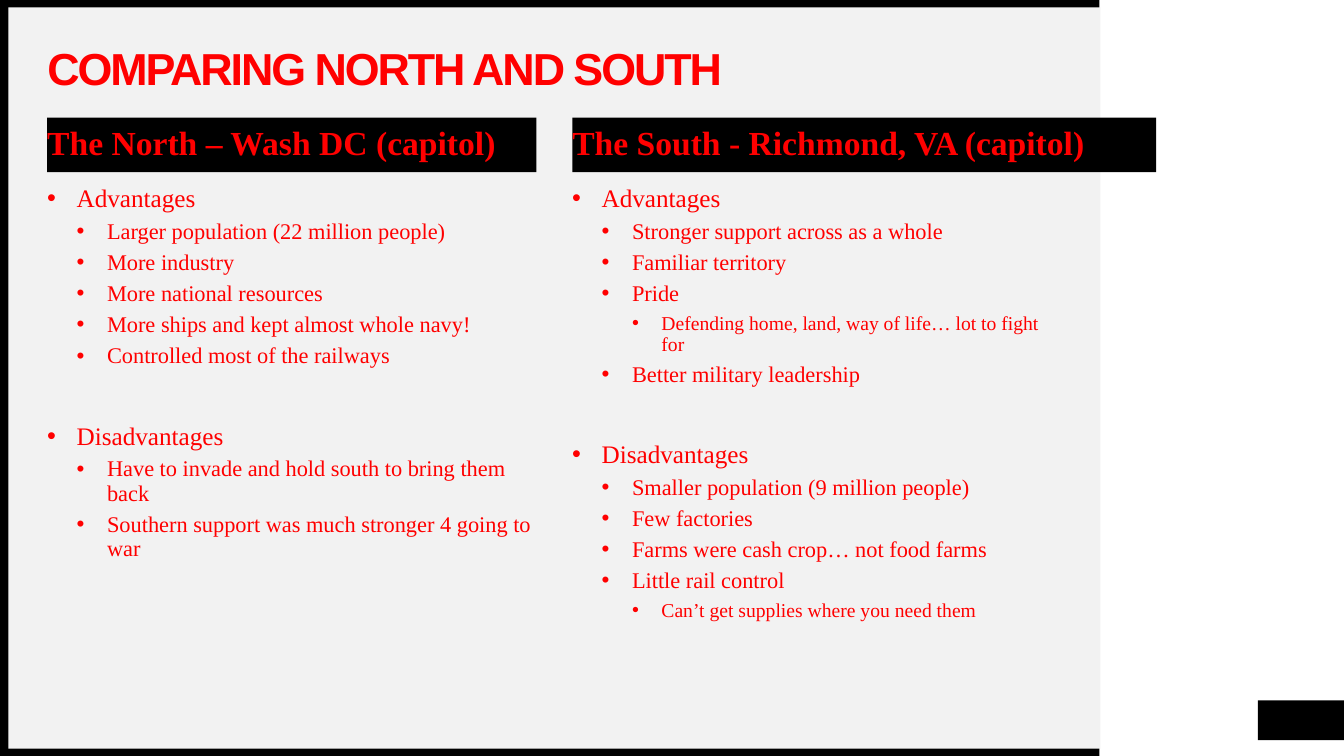
import dataclasses

import pptx
import pptx.dml.color
import pptx.enum.shapes
import pptx.enum.text
import pptx.oxml
import pptx.oxml.ns
import pptx.util

PX = 9525
RED, BLACK, PANEL = "FF0000", "000000", "F2F2F2"
SERIF = "Times New Roman"
ANCHOR = pptx.enum.text.MSO_ANCHOR
ALIGN = pptx.enum.text.PP_ALIGN


@dataclasses.dataclass(frozen=True)
class Box:
    left: int
    top: int
    width: int
    height: int

    def emu(self) -> tuple[int, int, int, int]:
        return self.left * PX, self.top * PX, self.width * PX, self.height * PX


@dataclasses.dataclass(frozen=True)
class Level:
    size: int
    margin: int
    hanging: int
    space_before: int


@dataclasses.dataclass(frozen=True)
class Side:
    left: int
    heading_width: int
    heading: str
    items: tuple[tuple[int, str], ...]


LEVELS = (Level(18, 28, 28, 10), Level(16, 57, 29, 5), Level(14, 85, 28, 5))
SECTION_GAP = 39

FRAME = (
    (Box(8, 7, 1040, 706), PANEL),
    (Box(1198, 667, 82, 38), BLACK),
    (Box(0, 713, 1047, 7), BLACK),
    (Box(0, 0, 1047, 7), BLACK),
    (Box(0, 3, 8, 717), BLACK),
)

SIDES = (
    Side(45, 466, "The North – Wash DC (capitol)", (
        (0, "Advantages"),
        (1, "Larger population (22 million people)"),
        (1, "More industry"),
        (1, "More national resources"),
        (1, "More ships and kept almost whole navy!"),
        (1, "Controlled most of the railways"),
        (0, "Disadvantages"),
        (1, "Have to invade and hold south to bring them back"),
        (1, "Southern support was much stronger 4 going to war"),
    )),
    Side(545, 556, "The South - Richmond, VA (capitol)", (
        (0, "Advantages"),
        (1, "Stronger support across as a whole"),
        (1, "Familiar territory"),
        (1, "Pride"),
        (2, "Defending home, land, way of life… lot to fight for"),
        (1, "Better military leadership"),
        (0, "Disadvantages"),
        (1, "Smaller population (9 million people)"),
        (1, "Few factories"),
        (1, "Farms were cash crop… not food farms"),
        (1, "Little rail control"),
        (2, "Can’t get supplies where you need them"),
    )),
)


def rgb(value: str) -> pptx.dml.color.RGBColor:
    return pptx.dml.color.RGBColor.from_string(value)


def style_font(font, name: str, size: int, color: str, bold: bool = False) -> None:
    font.name = name
    font.size = pptx.util.Pt(size)
    font.bold = bold
    font.color.rgb = rgb(color)


def prepare_frame(shape, anchor):
    """Clear the margins, wrap the text and return the text frame."""
    frame = shape.text_frame
    frame.margin_left = frame.margin_top = frame.margin_right = frame.margin_bottom = 0
    frame.word_wrap = True
    frame.auto_size = pptx.enum.text.MSO_AUTO_SIZE.NONE
    frame.vertical_anchor = anchor
    return frame


def add_block(page, box: Box, color: str):
    block = page.shapes.add_shape(pptx.enum.shapes.MSO_SHAPE.RECTANGLE, *box.emu())
    block.shadow.inherit = False
    block.fill.solid()
    block.fill.fore_color.rgb = rgb(color)
    block.line.fill.background()
    return block


def fill_title(page, text: str) -> None:
    title = page.shapes.title
    title.left, title.top, title.width, title.height = Box(45, 45, 966, 45).emu()
    para = prepare_frame(title, ANCHOR.MIDDLE).paragraphs[0]
    para.alignment = ALIGN.LEFT
    para.line_spacing = 0.9
    span = para.add_run()
    span.text = text
    style_font(span.font, "Arial", 32, RED, bold=True)
    span.font._element.set("spc", "-150")  # tracking in hundredths of a point
    page.shapes.element.append(title.element)  # in front of the panel


def add_heading(page, side: Side) -> None:
    block = add_block(page, Box(side.left, 112, side.heading_width, 52), BLACK)
    para = prepare_frame(block, ANCHOR.MIDDLE).paragraphs[0]
    para.text = side.heading
    para.alignment = ALIGN.LEFT
    para.line_spacing = 0.9
    style_font(para.font, SERIF, 24, RED, bold=True)


def add_bullet(para, level: Level) -> None:
    props = para._p.get_or_add_pPr()
    props.set("marL", str(level.margin * PX))
    props.set("indent", str(-level.hanging * PX))
    namespace = pptx.oxml.ns.nsdecls("a")
    font = pptx.oxml.parse_xml(f'<a:buFont {namespace} typeface="Arial"/>')
    bullet = pptx.oxml.parse_xml(f'<a:buChar {namespace} char="•"/>')
    props.insert_element_before(font, "a:tabLst", "a:defRPr", "a:extLst")
    props.insert_element_before(bullet, "a:tabLst", "a:defRPr", "a:extLst")


def add_items(page, side: Side) -> None:
    box = page.shapes.add_textbox(*Box(side.left, 177, 466, 505).emu())
    frame = prepare_frame(box, ANCHOR.TOP)
    for index, (depth, text) in enumerate(side.items):
        level = LEVELS[depth]
        para = frame.add_paragraph() if index else frame.paragraphs[0]
        para.text = text
        para.level = depth
        para.line_spacing = 0.9
        new_section = index > 0 and depth == 0
        para.space_before = pptx.util.Pt(SECTION_GAP if new_section else level.space_before)
        style_font(para.font, SERIF, level.size, RED)
        add_bullet(para, level)


def main() -> None:
    deck = pptx.Presentation()
    deck.slide_width, deck.slide_height = 1280 * PX, 720 * PX
    page = deck.slides.add_slide(deck.slide_layouts.get_by_name("Title Only"))
    for box, color in FRAME:
        add_block(page, box, color)
    fill_title(page, "COMPARING NORTH AND SOUTH")
    for side in SIDES:
        add_heading(page, side)
        add_items(page, side)
    deck.save("out.pptx")


if __name__ == "__main__":
    main()
